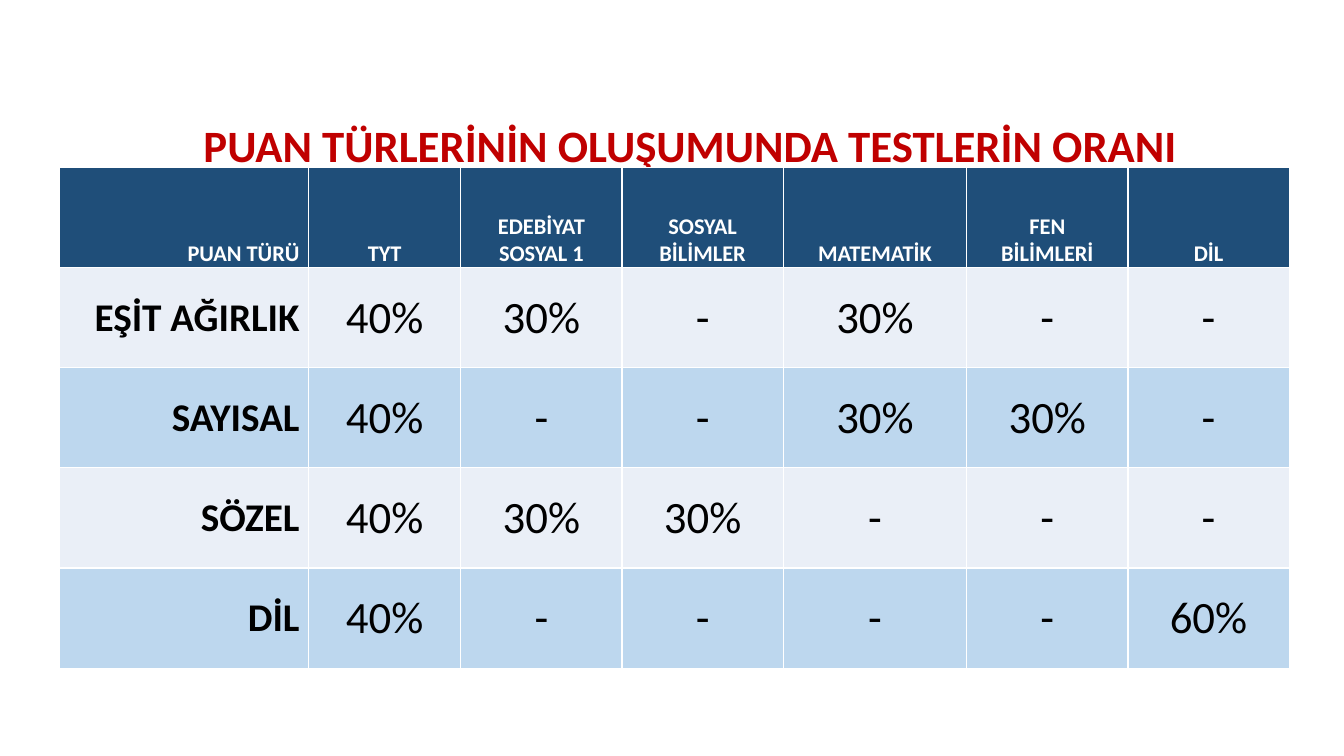
from lxml import etree
from pptx import Presentation
from pptx import util as u
from pptx.dml.color import RGBColor
from pptx.enum import text
from pptx.oxml.ns import qn

FONT = "Calibri"
RED, NAVY, WHITE, BLACK = "C00000", "1F4E79", "FFFFFF", "000000"
BANDS = ["EAEFF7", "BDD7EE"]
MID, LOW = text.MSO_ANCHOR.MIDDLE, text.MSO_ANCHOR.BOTTOM
MAIN, SIDE = text.PP_ALIGN.CENTER, text.PP_ALIGN.RIGHT

TITLE = "PUAN TÜRLERİNİN OLUŞUMUNDA TESTLERİN ORANI"
HEAD = ["PUAN TÜRÜ", "TYT", "EDEBİYAT\nSOSYAL 1", "SOSYAL\nBİLİMLER",
        "MATEMATİK", "FEN\nBİLİMLERİ", "DİL"]
ROWS = [
    ["EŞİT AĞIRLIK", "40%", "30%", "-", "30%", "-", "-"],
    ["SAYISAL", "40%", "-", "-", "30%", "30%", "-"],
    ["SÖZEL", "40%", "30%", "30%", "-", "-", "-"],
    ["DİL", "40%", "-", "-", "-", "-", "60%"],
]
# Percent of the slide's width and height
COLS = [18.53, 11.33, 12, 12, 13.65, 12, 12]
ROW = 13.25


def color(code):
    return RGBColor.from_string(code)


def write(frame, words, size=32, bold=False, ink=BLACK, align=MAIN, space=None):
    para = frame.paragraphs[0]
    para.text = words
    para.alignment = align
    para.line_spacing = space
    for run in para.runs:
        font = run.font
        font.name, font.size, font.bold = FONT, u.Pt(size), bold
        font.color.rgb = color(ink)


def border(cell, code, width):
    props = cell._tc.get_or_add_tcPr()
    for side in ("lnL", "lnR", "lnT", "lnB"):
        line = etree.SubElement(props, qn(f"a:{side}"), w=str(u.Pt(width)))
        fill = etree.SubElement(line, qn("a:solidFill"))
        etree.SubElement(fill, qn("a:srgbClr"), val=code)


class Deck:
    """Holds the current slide; lengths are percents of its size."""

    def __init__(self):
        self.show = Presentation()
        self.show.slide_width = u.Inches(13.33)
        self.show.slide_height = u.Inches(7.5)
        self.slide = self.show.slides.add_slide(self.show.slide_layouts[5])

    def wide(self, share):
        return round(self.show.slide_width * share / 100)

    def high(self, share):
        return round(self.show.slide_height * share / 100)

    def box(self, left, top, width, height):
        return (self.wide(left), self.high(top),
                self.wide(width), self.high(height))

    def title(self, words, *place):
        shape = self.slide.shapes.title
        shape.left, shape.top, shape.width, shape.height = self.box(*place)
        frame = shape.text_frame
        frame.word_wrap = True
        frame.auto_size = text.MSO_AUTO_SIZE.NONE
        frame.vertical_anchor = MID
        write(frame, words, bold=True, ink=RED, space=0.9)

    def cell(self, cell, words, fill, anchor, first, **form):
        cell.margin_left = cell.margin_top = u.Inches(0.01)
        cell.margin_right = u.Inches(0.09 if first else 0.01)
        cell.margin_bottom = 0
        cell.vertical_anchor = anchor
        border(cell, WHITE, 1)
        cell.fill.solid()
        cell.fill.fore_color.rgb = color(fill)
        write(cell.text_frame, words, align=SIDE if first else MAIN, **form)

    def table(self, left, top, head, rows):
        data = [head] + rows
        place = self.box(left, top, sum(COLS), ROW * len(data))
        grid = self.slide.shapes.add_table(len(data), len(COLS), *place).table
        grid.first_row = grid.horz_banding = False
        for col, share in zip(grid.columns, COLS):
            col.width = self.wide(share)
        for r, line in enumerate(data):
            grid.rows[r].height = self.high(ROW)
            for c, words in enumerate(line):
                first = c == 0
                if r == 0:
                    look = dict(fill=NAVY, anchor=LOW, size=16, bold=True, ink=WHITE)
                else:
                    look = dict(fill=BANDS[(r - 1) % 2], anchor=MID,
                                size=28 if first else 32, bold=first)
                self.cell(grid.cell(r, c), words, first=first, **look)


def main():
    deck = Deck()
    deck.title(TITLE, 5.55, 14.8, 91.67, 9.6)
    deck.table(4.43, 22.13, HEAD, ROWS)
    deck.show.save("out.pptx")


if __name__ == "__main__":
    main()
